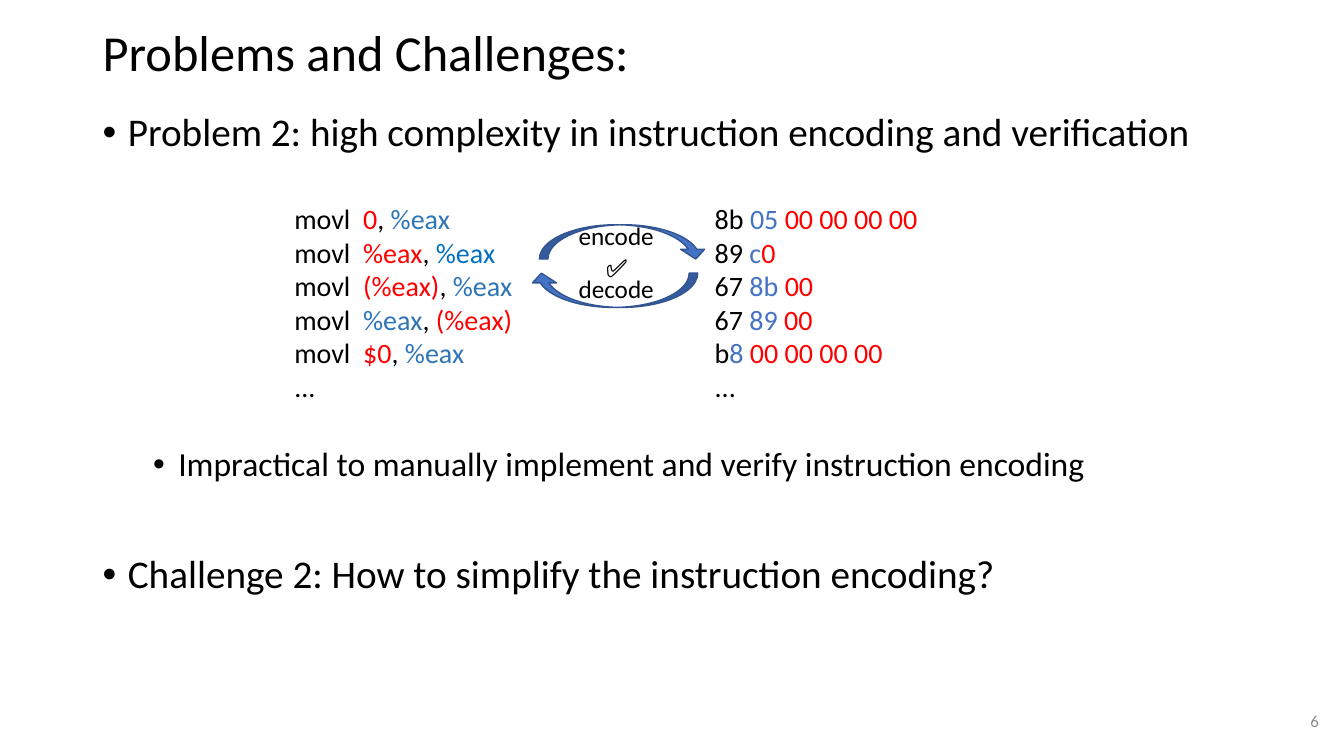
from pptx import Presentation
from pptx.dml.color import RGBColor
from pptx.enum.shapes import MSO_SHAPE
from pptx.enum.text import MSO_ANCHOR, MSO_AUTO_SIZE, PP_ALIGN
from pptx.oxml.ns import qn
from pptx.util import Inches, Pt
from lxml import etree

CURVED_ARROW = MSO_SHAPE.CURVED_DOWN_ARROW
MIDDLE, TOP = MSO_ANCHOR.MIDDLE, MSO_ANCHOR.TOP
RIGHT = PP_ALIGN.RIGHT
GROW = MSO_AUTO_SIZE.SHAPE_TO_FIT_TEXT

# Content
FONT = "Calibri"
COLORS = {
    "black": "000000", "red": "FF0000", "steel": "2E75B6", "sky": "0070C0",
    "blue": "4472C4", "navy": "325491", "gray": "8C8C8C",
}
TITLE = "Problems and Challenges:"
PAGE_NUMBER = "6"
# text, size, left indent in inches, space before in points
BULLETS = [
    ("Problem 2: high complexity in instruction encoding and verification", 28, 0.25, 10),
    ("Impractical to manually implement and verify instruction encoding", 24, 0.75, 208.8),
    ("Challenge 2: How to simplify the instruction encoding?", 28, 0.25, 50.8),
]
# Each line is a list of (text, color) pieces
ASSEMBLY = [
    [("movl  ", "black"), ("0", "red"), (", ", "black"), ("%eax", "steel")],
    [("movl  ", "black"), ("%eax", "red"), (", ", "black"), ("%eax", "sky")],
    [("movl  ", "black"), ("(%eax)", "red"), (", ", "black"), ("%eax", "steel")],
    [("movl  ", "black"), ("%eax", "steel"), (", ", "black"), ("(%eax)", "red")],
    [("movl  ", "black"), ("$0", "red"), (", ", "black"), ("%eax", "steel")],
    [("...", "black")],
]
MACHINE_CODE = [
    [("8b ", "black"), ("05 ", "blue"), ("00 00 00 00", "red")],
    [("89 ", "black"), ("c", "blue"), ("0", "red")],
    [("67 ", "black"), ("8b ", "blue"), ("00", "red")],
    [("67 ", "black"), ("89 ", "blue"), ("00", "red")],
    [("b", "black"), ("8 ", "blue"), ("00 00 00 00", "red")],
    [("...", "black")],
]

# Layout in inches
WIDTH, HEIGHT = 13.33, 7.5
MARGIN = 0.92
TEXT_WIDTH = WIDTH - 2 * MARGIN
CODE_TOP, CODE_HEIGHT = 1.95, 2.12
LABEL_LEFT, LABEL_WIDTH, LABEL_HEIGHT = 5.64, 0.96, 0.4
ARROW_WIDTH, ARROW_HEIGHT = 1.67, 0.34
HANGING = 0.25

deck = Presentation()
deck.slide_width, deck.slide_height = Inches(WIDTH), Inches(HEIGHT)
slide = deck.slides.add_slide(deck.slide_layouts[6])


def rgb(name):
    return RGBColor.from_string(COLORS[name])


def add_text(box, lines, size, wrap=False, anchor=TOP):
    area = slide.shapes.add_textbox(*map(Inches, box))
    frame = area.text_frame
    frame.word_wrap = wrap
    frame.vertical_anchor = anchor
    if not wrap:
        frame.auto_size = GROW
    for number, pieces in enumerate(lines):
        paragraph = frame.paragraphs[0] if number == 0 else frame.add_paragraph()
        for text, color in pieces:
            run = paragraph.add_run()
            run.text = text
            run.font.name, run.font.size = FONT, Pt(size)
            run.font.color.rgb = rgb(color)
    return frame.paragraphs


def add_arrow(left, top, rotation):
    arrow = slide.shapes.add_shape(
        CURVED_ARROW, *map(Inches, (left, top, ARROW_WIDTH, ARROW_HEIGHT)))
    arrow.shadow.inherit = False
    arrow.rotation = rotation
    for index, share in enumerate((0.25, 0.7, 0.283)):
        arrow.adjustments[index] = share
    arrow.fill.solid()
    arrow.fill.fore_color.rgb = rgb("blue")
    arrow.line.color.rgb = rgb("navy")
    arrow.line.width = Pt(1)


# Title
heading = add_text((MARGIN, 0.15, TEXT_WIDTH, 0.8), [[(TITLE, "black")]], 36, True, MIDDLE)
heading[0].line_spacing = 0.9

# Bullets, spaced to leave room for the code
points = add_text((MARGIN, 1.07, TEXT_WIDTH, 5.69),
                  [[(text, "black")] for text, *_ in BULLETS], 28, True)
for point, (_, size, indent, gap) in zip(points, BULLETS):
    point.runs[0].font.size = Pt(size)
    point.line_spacing = 0.9
    point.space_before = Pt(gap)
    properties = point._p.get_or_add_pPr()
    properties.set("marL", str(Inches(indent)))
    properties.set("indent", str(-Inches(HANGING)))
    etree.SubElement(properties, qn("a:buFont")).set("typeface", "Arial")
    etree.SubElement(properties, qn("a:buChar")).set("char", "•")

# Assembly and machine code
add_text((2.82, CODE_TOP, 2.38, CODE_HEIGHT), ASSEMBLY, 20)
add_text((6.99, CODE_TOP, 2.23, CODE_HEIGHT), MACHINE_CODE, 20)

# Encode and decode cycle
add_text((5.91, 2.45, 0.45, LABEL_HEIGHT), [[("✅", "black")]], 18)
for label, label_top, arrow_left, arrow_top, rotation in [
    ("encode", 2.14, 5.35, 2.23, 0),
    ("decode", 2.66, 5.25, 2.71, 180),
]:
    add_arrow(arrow_left, arrow_top, rotation)
    add_text((LABEL_LEFT, label_top, LABEL_WIDTH, LABEL_HEIGHT), [[(label, "black")]], 18)

# Page number
page = add_text((10.18, 6.95, 3, 0.4), [[(PAGE_NUMBER, "gray")]], 12, True, MIDDLE)
page[0].alignment = RIGHT

deck.save("out.pptx")
